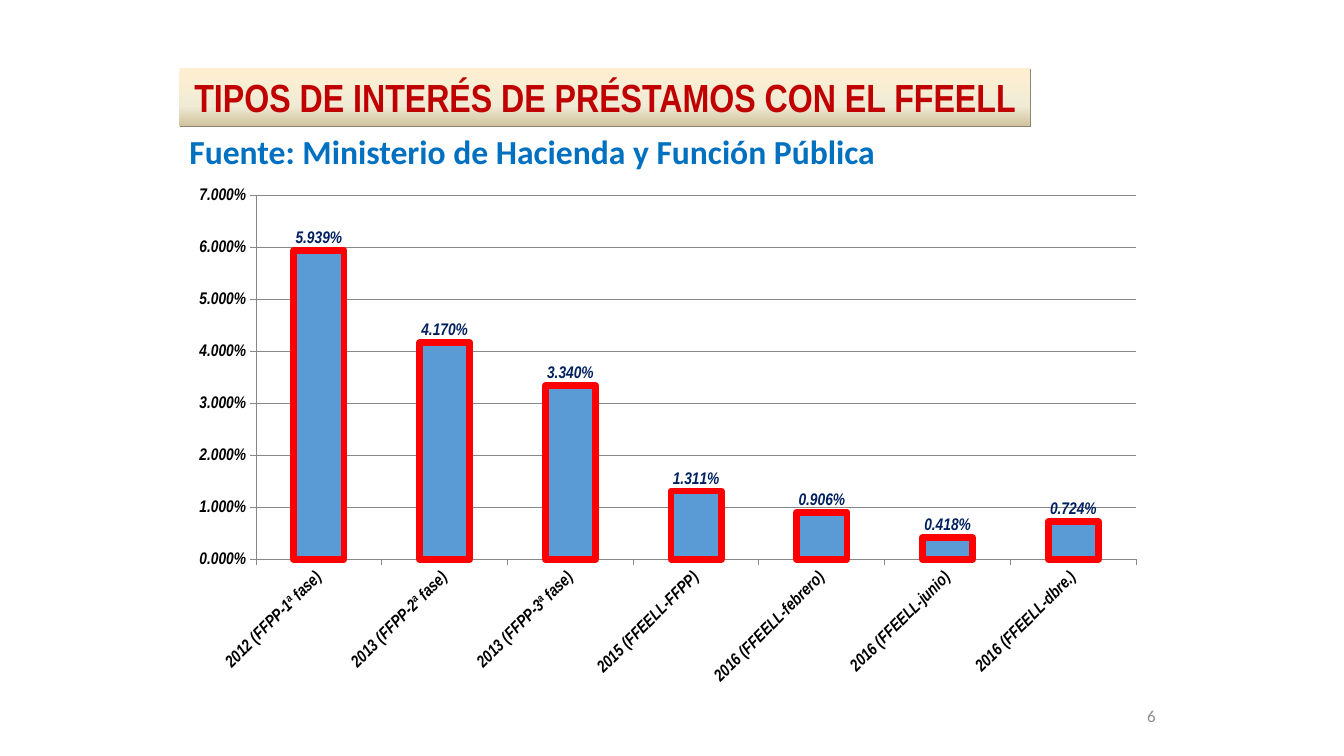
from lxml.etree import SubElement
from pptx import Presentation
from pptx.chart.data import CategoryChartData
from pptx.dml.color import RGBColor
from pptx.enum.chart import XL_CHART_TYPE, XL_LABEL_POSITION, XL_TICK_MARK
from pptx.enum.shapes import MSO_SHAPE
from pptx.enum.text import MSO_ANCHOR, MSO_AUTO_SIZE, PP_ALIGN
from pptx.oxml import parse_xml
from pptx.oxml.ns import nsdecls, qn
from pptx.util import Inches, Pt

COLORS = {
    "title": "C00000", "title_shadow": "8C8672", "source": "0070C0",
    "number": "8C8C8C", "axis": "000000", "rule": "878787",
    "bar": "5B9BD5", "bar_edge": "FF0000", "label": "002060",
}
TITLE_GRADIENT = [(0, "FFEFD1"), (65, "F0EBD5"), (100, "D1C39F")]
RATES = [
    ("2012 (FFPP-1ª fase)", 0.05939),
    ("2013 (FFPP-2ª fase)", 0.0417),
    ("2013 (FFPP-3ª fase)", 0.0334),
    ("2015 (FFEELL-FFPP)", 0.01311),
    ("2016 (FFEELL-febrero)", 0.00906),
    ("2016 (FFEELL-junio)", 0.00418),
    ("2016 (FFEELL-dbre.)", 0.00724),
]
PERCENT = "0.000%"
CHART_PLACE = (1.78, 1.76, 9.69, 5.14)
PLOT_PLACE = (0.76, 0.18, 8.73, 3.61)  # inches, measured inside the chart


def rgb(name):
    return RGBColor.from_string(COLORS[name])


def box(left, top, width, height):
    return [Inches(length) for length in (left, top, width, height)]


def style_font(font, size, color, name, bold=False, italic=False):
    font.size, font.name = Pt(size), name
    font.bold, font.italic = bold, italic
    font.color.rgb = rgb(color)


def style_line(line, color, width):
    line.color.rgb = rgb(color)
    line.width = Pt(width)


def fill_gradient(shape, stops):
    """Fill the shape from top to bottom with (percent, colour) stops."""
    stop_xml = "".join(
        f'<a:gs pos="{percent * 1000}"><a:srgbClr val="{color}"/></a:gs>'
        for percent, color in stops)
    gradient = parse_xml(
        f'<a:gradFill {nsdecls("a")} rotWithShape="1"><a:gsLst>{stop_xml}</a:gsLst>'
        '<a:lin ang="5400000" scaled="0"/></a:gradFill>')
    shape.element.spPr.find(qn("a:prstGeom")).addnext(gradient)


def add_thin_shadow(shape, color):
    """Cast a sharp shadow to the lower right."""
    shape.shadow.inherit = False
    effects = shape.element.spPr.find(qn("a:effectLst"))
    effects.append(parse_xml(
        f'<a:outerShdw {nsdecls("a")} blurRad="0" dist="{Pt(1)}" dir="2700000" '
        f'algn="tl" rotWithShape="0"><a:srgbClr val="{COLORS[color]}"/></a:outerShdw>'))


def add_title(slide, text):
    title = slide.shapes.add_shape(MSO_SHAPE.RECTANGLE, *box(1.78, 0.68, 8.44, 0.57))
    fill_gradient(title, TITLE_GRADIENT)
    title.line.fill.background()
    add_thin_shadow(title, "title_shadow")
    frame = title.text_frame
    frame.word_wrap = False
    frame.auto_size = MSO_AUTO_SIZE.SHAPE_TO_FIT_TEXT
    frame.vertical_anchor = MSO_ANCHOR.TOP
    paragraph = frame.paragraphs[0]
    paragraph.text = text
    paragraph.alignment = PP_ALIGN.CENTER
    style_font(paragraph.font, 28, "title", "Arial Narrow", bold=True)


def add_text(slide, text, place, size, color, bold=False,
             align=PP_ALIGN.LEFT, anchor=MSO_ANCHOR.TOP):
    frame = slide.shapes.add_textbox(*box(*place)).text_frame
    frame.word_wrap = True
    frame.vertical_anchor = anchor
    paragraph = frame.paragraphs[0]
    paragraph.text = text
    paragraph.alignment = align
    style_font(paragraph.font, size, color, "Calibri", bold)
    return paragraph


def style_axis(axis):
    axis.major_tick_mark = XL_TICK_MARK.OUTSIDE
    axis.minor_tick_mark = XL_TICK_MARK.NONE
    style_line(axis.format.line, "rule", 0.75)
    style_font(axis.tick_labels.font, 12, "axis", "Arial Narrow", True, True)


def place_plot_area(chart):
    """Fix the inner plot area as fractions of the chart."""
    plot_area = chart.element.chart.plotArea
    layout = plot_area.find(qn("c:layout"))
    if layout is None:
        layout = plot_area.makeelement(qn("c:layout"))
        plot_area.insert(0, layout)
    manual = SubElement(layout, qn("c:manualLayout"))
    chart_size = CHART_PLACE[2:] * 2
    fractions = [length / whole for length, whole in zip(PLOT_PLACE, chart_size)]
    settings = {"layoutTarget": "inner", "xMode": "edge", "yMode": "edge",
                **dict(zip("xywh", fractions))}
    for tag, value in settings.items():
        SubElement(manual, qn(f"c:{tag}")).set("val", str(value))


def add_rates_chart(slide):
    rates = CategoryChartData(number_format=PERCENT)
    rates.categories = [loan for loan, _ in RATES]
    rates.add_series("Series 1", [rate for _, rate in RATES])
    chart = slide.shapes.add_chart(
        XL_CHART_TYPE.COLUMN_CLUSTERED, *box(*CHART_PLACE), rates).chart
    chart.has_legend = chart.has_title = False
    style_font(chart.font, 10, "axis", "Calibri")
    place_plot_area(chart)

    loans, percent = chart.category_axis, chart.value_axis
    style_axis(loans)
    loans_text = loans._element.find(qn("c:txPr")).find(qn("a:bodyPr"))
    loans_text.set("rot", "-2700000")
    loans_text.set("vert", "horz")
    style_axis(percent)
    percent.minimum_scale, percent.maximum_scale, percent.major_unit = 0, 0.07, 0.01
    percent.tick_labels.number_format = PERCENT
    percent.tick_labels.number_format_is_linked = False
    style_line(percent.major_gridlines.format.line, "rule", 0.75)

    plot = chart.plots[0]
    plot.gap_width = 150
    plot.vary_by_categories = False
    bars = plot.series[0]
    bars.format.fill.solid()
    bars.format.fill.fore_color.rgb = rgb("bar")
    style_line(bars.format.line, "bar_edge", 4.75)
    labels = bars.data_labels
    labels.show_value = True
    labels.number_format = PERCENT
    labels.number_format_is_linked = False
    labels.position = XL_LABEL_POSITION.OUTSIDE_END
    style_font(labels.font, 12, "label", "Arial Narrow", True, True)


def main():
    presentation = Presentation()
    presentation.slide_width, presentation.slide_height = Inches(13.33), Inches(7.5)
    slide = presentation.slides.add_slide(presentation.slide_layouts[6])
    add_title(slide, "TIPOS DE INTERÉS DE PRÉSTAMOS CON EL FFEELL")
    add_text(slide, "6", (9.03, 6.9, 2.53, 0.4), 12, "number",
             align=PP_ALIGN.RIGHT, anchor=MSO_ANCHOR.MIDDLE)
    add_rates_chart(slide)
    source = add_text(slide, "Fuente: Ministerio de Hacienda y Función Pública",
                      (1.78, 1.29, 8.78, 1.05), 24, "source", bold=True)
    source.line_spacing = 0.9
    source.space_before = Pt(10)
    presentation.save("out.pptx")


if __name__ == "__main__":
    main()
